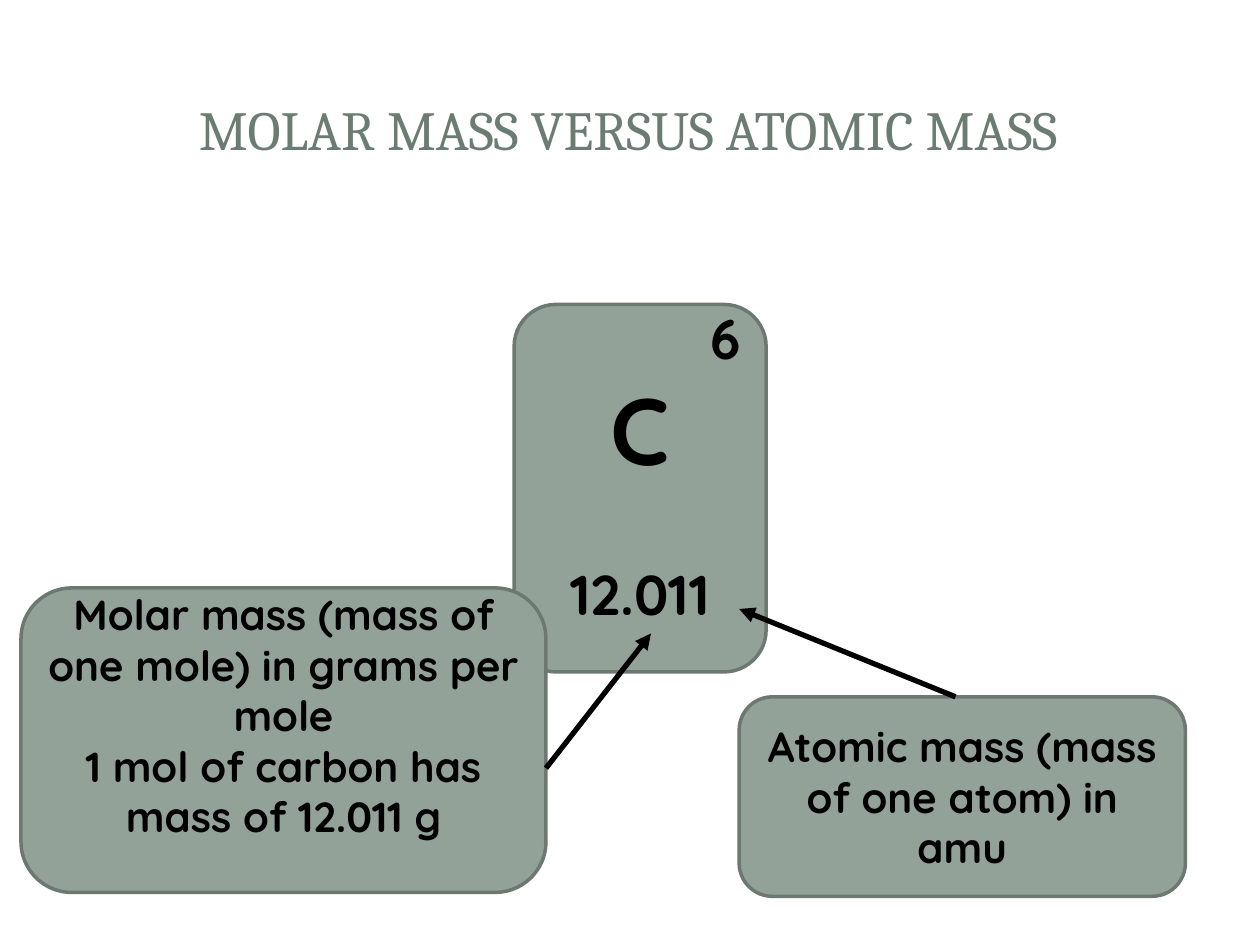
"""Build a slide comparing molar mass with atomic mass for carbon."""
from lxml.etree import SubElement
from pptx import Presentation
from pptx.dml.color import RGBColor
from pptx.enum.shapes import MSO_CONNECTOR as Connector, MSO_SHAPE as Shape
from pptx.enum.text import MSO_ANCHOR as Anchor, PP_ALIGN as Align
from pptx.oxml.ns import qn
from pptx.util import Pt

COLORS = {"title": "6B7D72", "fill": "93A299", "border": "6D7871", "ink": "000000"}


def color(name):
    return RGBColor.from_string(COLORS[name])


def write(box, text, size, font="Quicksand", ink="ink", bold=True,
          align=Align.CENTER, before=0, first=False):
    frame = box.text_frame
    para = frame.paragraphs[0] if first else frame.add_paragraph()
    para.alignment = align
    para.space_before = Pt(before)
    span = para.add_run()
    span.text = text
    span.font.name = font
    span.font.size = Pt(size)
    span.font.bold = bold
    span.font.color.rgb = color(ink)


deck = Presentation()
deck.slide_width, deck.slide_height = Pt(720), Pt(540)
page = deck.slides.add_slide(deck.slide_layouts[6])

title = page.shapes.add_textbox(Pt(34), Pt(32.4), Pt(650), Pt(82))
title.text_frame.word_wrap = True
title.text_frame.vertical_anchor = Anchor.MIDDLE
write(title, "MOLAR MASS VERSUS ATOMIC MASS", 31.5, font="Cambria",
      ink="title", bold=False, first=True)

cards = [
    ((293.8, 174, 144, 210), 30, [
        ("6", {"size": 32, "align": Align.RIGHT}),
        ("C", {"size": 54}),
        ("12.011", {"size": 32, "before": 43}),
    ]),
    ((12, 336, 300, 174), 32.4, [
        ("Molar mass (mass of one mole) in grams per mole", {"size": 24}),
        ("1 mol of carbon has mass of 12.011 g", {"size": 24}),
    ]),
    ((422.4, 398.2, 255, 114), 3.6, [
        ("Atomic mass (mass of one atom) in amu", {"size": 24}),
    ]),
]
for bounds, bottom_inset, lines in cards:
    card = page.shapes.add_shape(Shape.ROUNDED_RECTANGLE, *map(Pt, bounds))
    card.shadow.inherit = False
    card.fill.solid()
    card.fill.fore_color.rgb = color("fill")
    card.line.color.rgb = color("border")
    card.line.width = Pt(2)
    card.text_frame.word_wrap = True
    card.text_frame.vertical_anchor = Anchor.MIDDLE
    card.text_frame.margin_bottom = Pt(bottom_inset)
    for index, (text, style) in enumerate(lines):
        write(card, text, first=index == 0, **style)

for ends in [(312, 439, 372, 362), (546, 398.2, 422.4, 348)]:
    arrow = page.shapes.add_connector(Connector.STRAIGHT, *map(Pt, ends))
    arrow.line.color.rgb = color("ink")
    arrow.line.width = Pt(3)
    SubElement(arrow.line._get_or_add_ln(), qn("a:tailEnd"), type="triangle")
    SubElement(arrow._element.spPr, qn("a:effectLst"))

deck.save("out.pptx")
